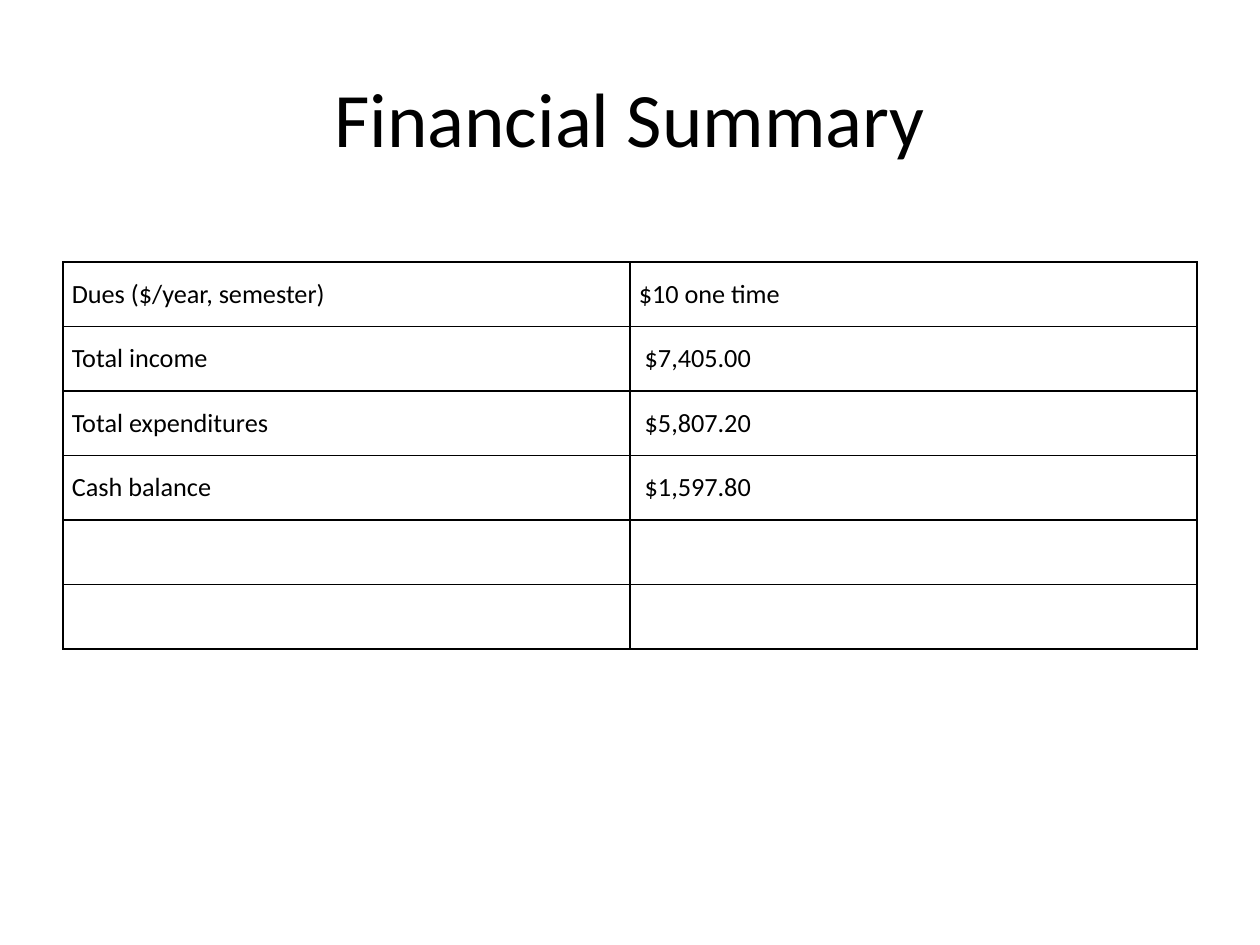
from dataclasses import dataclass

from lxml import etree
from pptx import Presentation
from pptx.dml.color import RGBColor
from pptx.enum.text import MSO_ANCHOR, PP_ALIGN
from pptx.oxml.ns import qn
from pptx.util import Inches, Pt

CENTER, JUSTIFY = PP_ALIGN.CENTER, PP_ALIGN.JUSTIFY
MIDDLE = MSO_ANCHOR.MIDDLE

TITLE = "Financial Summary"
SUMMARY = [
    ("Dues ($/year, semester)", "$10 one time"),
    ("Total income", " $7,405.00 "),
    ("Total expenditures", " $5,807.20 "),
    ("Cash balance", " $1,597.80 "),
    ("", ""),
    ("", ""),
]


@dataclass(frozen=True)
class Theme:
    font: str = "Calibri"
    ink: str = "000000"
    title_size: int = 44
    body_size: int = 15
    border_width: int = 1


THEME = Theme()
LEFT, WIDTH = 0.5, 9
TITLE_TOP, TITLE_HEIGHT = 0.3, 1.25
TABLE_TOP, ROW_HEIGHT = 2.08, 0.512
CELL_INSET = 0.07


def write(frame, text, *, size, align, space_before=0):
    paragraph = frame.paragraphs[0]
    paragraph.alignment = align
    paragraph.space_before = Pt(space_before)
    paragraph.font.size = Pt(size)
    if not text:
        return
    run = paragraph.add_run()
    run.text = text
    run.font.name = THEME.font
    run.font.size = Pt(size)
    run.font.bold = False
    run.font.color.rgb = RGBColor.from_string(THEME.ink)


def add_borders(cell):
    """Line all four sides; the lines must precede the fill in tcPr."""
    properties = cell._tc.get_or_add_tcPr()
    for position, side in enumerate(("a:lnL", "a:lnR", "a:lnT", "a:lnB")):
        line = etree.Element(qn(side), w=str(Pt(THEME.border_width)))
        fill = etree.SubElement(line, qn("a:solidFill"))
        etree.SubElement(fill, qn("a:srgbClr"), val=THEME.ink)
        properties.insert(position, line)


def add_title(slide):
    box = slide.shapes.add_textbox(
        Inches(LEFT), Inches(TITLE_TOP), Inches(WIDTH), Inches(TITLE_HEIGHT))
    frame = box.text_frame
    frame.word_wrap = True
    frame.vertical_anchor = MIDDLE
    write(frame, TITLE, size=THEME.title_size, align=CENTER)


def add_summary(slide):
    table = slide.shapes.add_table(
        len(SUMMARY), len(SUMMARY[0]), Inches(LEFT), Inches(TABLE_TOP),
        Inches(WIDTH), Inches(ROW_HEIGHT * len(SUMMARY))).table
    table.first_row = False
    table.horz_banding = False
    for row, entries in enumerate(SUMMARY):
        for column, entry in enumerate(entries):
            cell = table.cell(row, column)
            cell.fill.background()
            cell.vertical_anchor = MIDDLE
            cell.margin_left = cell.margin_right = Inches(CELL_INSET)
            cell.margin_top = cell.margin_bottom = 0
            add_borders(cell)
            write(cell.text_frame, entry, size=THEME.body_size,
                  align=JUSTIFY, space_before=6)


def main():
    deck = Presentation()
    deck.slide_width, deck.slide_height = Inches(10), Inches(7.5)
    slide = deck.slides.add_slide(deck.slide_layouts[6])
    add_title(slide)
    add_summary(slide)
    deck.save("out.pptx")


if __name__ == "__main__":
    main()
